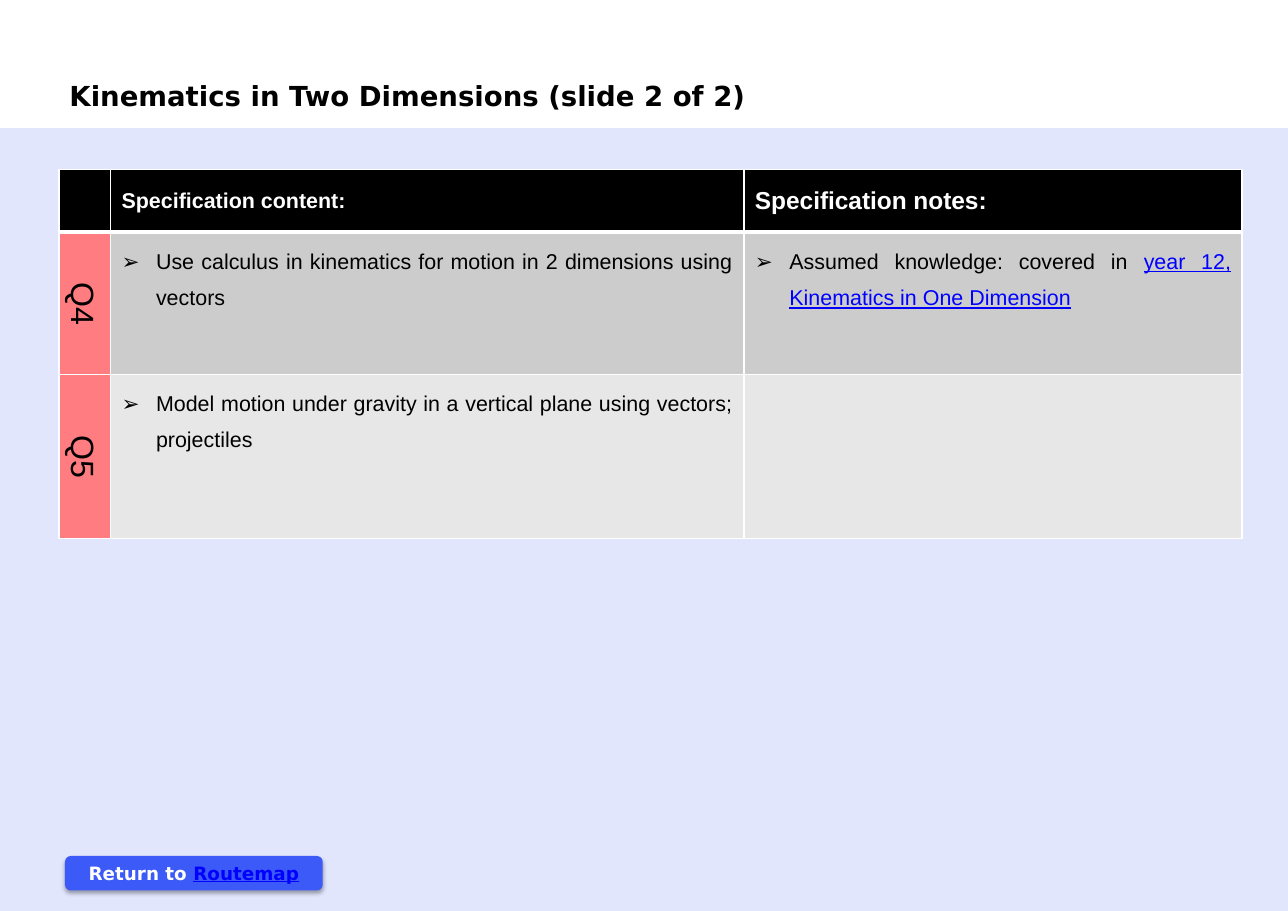
import pptx
import pptx.dml.color
import pptx.enum.shapes
import pptx.enum.text
import pptx.oxml
import pptx.oxml.ns
import pptx.util
from lxml import etree

Pt = pptx.util.Pt
RGBColor = pptx.dml.color.RGBColor
ALIGN = pptx.enum.text.PP_ALIGN
ANCHOR = pptx.enum.text.MSO_ANCHOR
SHAPES = pptx.enum.shapes.MSO_SHAPE
qn = pptx.oxml.ns.qn

BLUE = RGBColor(0x3B, 0x5A, 0xF7)
LINK = RGBColor(0x00, 0x00, 0xFF)
BLACK = RGBColor(0x00, 0x00, 0x00)
WHITE = RGBColor(0xFF, 0xFF, 0xFF)
PINK = RGBColor(0xFF, 0x7C, 0x80)
GREY = RGBColor(0xCC, 0xCC, 0xCC)
PALE_GREY = RGBColor(0xE7, 0xE7, 0xE7)

HEADING_FONT = "DejaVu Sans"
TABLE_FONT = "Arial"
WIDTH, HEIGHT = Pt(841.9), Pt(595.3)

# Each row: label, content, notes, linked notes, fill
TOPICS = [
    ("Q4", "Use calculus in kinematics for motion in 2 dimensions using vectors",
     "Assumed knowledge: covered in ", "year 12, Kinematics in One Dimension", GREY),
    ("Q5", "Model motion under gravity in a vertical plane using vectors; projectiles",
     "", "", PALE_GREY),
]


def write(paragraph, text, font, size, color, bold=False, link=""):
    paragraph.add_run().text = text
    paragraph.font.name = font
    paragraph.font.size = Pt(size)
    paragraph.font.bold = bold
    paragraph.font.color.rgb = color
    if link:
        linked = paragraph.add_run()
        linked.text = link
        linked.font.underline = True
        linked.font.color.rgb = LINK


def add_bullet(paragraph):
    paragraph.alignment = ALIGN.JUSTIFY
    paragraph.line_spacing = 1.5
    properties = paragraph._p.get_or_add_pPr()
    properties.set("marL", str(Pt(22.5)))
    properties.set("indent", str(Pt(-22.5)))
    etree.SubElement(properties, qn("a:buFont"), typeface=TABLE_FONT)
    etree.SubElement(properties, qn("a:buChar"), char="➢")


def format_cell(cell, color, bottom=1):
    cell.fill.solid()
    cell.fill.fore_color.rgb = color
    properties = cell._tc.get_or_add_tcPr()
    widths = {"lnL": 1, "lnR": 1, "lnT": 1, "lnB": bottom}
    for position, (side, width) in enumerate(widths.items()):
        border = etree.Element(qn(f"a:{side}"), w=str(Pt(width)))
        fill = etree.SubElement(border, qn("a:solidFill"))
        etree.SubElement(fill, qn("a:srgbClr"), val=str(WHITE))
        properties.insert(position, border)


def add_block(slide, kind, left, top, width, height):
    block = slide.shapes.add_shape(kind, left, top, width, height)
    block.shadow.inherit = False
    block.fill.solid()
    block.fill.fore_color.rgb = BLUE
    block.line.fill.background()
    return block


def add_band(slide):
    top = Pt(83.7)
    band = add_block(slide, SHAPES.RECTANGLE, 0, top, WIDTH, HEIGHT - top)
    color = band._element.spPr.find(qn("a:solidFill")).find(qn("a:srgbClr"))
    etree.SubElement(color, qn("a:alpha"), val="15000")


def add_return_button(slide):
    button = add_block(slide, SHAPES.ROUNDED_RECTANGLE,
                       Pt(42.5), Pt(559.4), Pt(168.5), Pt(22.5))
    effects = button._element.spPr.find(qn("a:effectLst"))
    shadow = etree.SubElement(effects, qn("a:outerShdw"), blurRad=str(Pt(3.1)),
                              dist=str(Pt(1.8)), dir="5400000", rotWithShape="0")
    color = etree.SubElement(shadow, qn("a:srgbClr"), val=str(BLACK))
    etree.SubElement(color, qn("a:alpha"), val="35000")
    button.text_frame.vertical_anchor = ANCHOR.MIDDLE
    caption = button.text_frame.paragraphs[0]
    caption.alignment = ALIGN.CENTER
    write(caption, "Return to ", HEADING_FONT, 12, WHITE, True, "Routemap")


def add_title(slide, text):
    title = slide.shapes.title
    title.left, title.top, title.width, title.height = Pt(38.2), Pt(48.2), Pt(495), Pt(29)
    frame = title.text_frame
    frame.word_wrap = True
    frame.auto_size = pptx.enum.text.MSO_AUTO_SIZE.SHAPE_TO_FIT_TEXT
    frame.vertical_anchor = ANCHOR.TOP
    heading = frame.paragraphs[0]
    heading.alignment = ALIGN.LEFT
    write(heading, text, HEADING_FONT, 18, BLACK, True)


def add_specification(slide):
    columns, rows = (33.8, 414, 325.6), (41, 92.9, 107.3)
    table = slide.shapes.add_table(len(rows), len(columns), Pt(38.5), Pt(110.9),
                                   Pt(sum(columns)), Pt(sum(rows))).table
    table.horz_banding = False
    for column, width in zip(table.columns, columns):
        column.width = Pt(width)
    for row, height in zip(table.rows, rows):
        row.height = Pt(height)

    # Header row
    headers = [("", 14), ("Specification content:", 14), ("Specification notes:", 16)]
    for cell, (text, size) in zip(table.rows[0].cells, headers):
        format_cell(cell, BLACK, bottom=3)
        cell.vertical_anchor = ANCHOR.MIDDLE
        if text:
            write(cell.text_frame.paragraphs[0], text, TABLE_FONT, size, WHITE, True)

    # Topic rows
    for row, (label, content, notes, link, color) in enumerate(TOPICS, 1):
        label_cell = table.cell(row, 0)
        format_cell(label_cell, PINK)
        label_cell._tc.get_or_add_tcPr().set("vert", "vert")
        label_line = label_cell.text_frame.paragraphs[0]
        label_line.alignment = ALIGN.CENTER
        write(label_line, label, TABLE_FONT, 21, BLACK)
        for column, (text, linked) in enumerate([(content, ""), (notes, link)], 1):
            cell = table.cell(row, column)
            format_cell(cell, color)
            if text:
                item = cell.text_frame.paragraphs[0]
                add_bullet(item)
                write(item, text, TABLE_FONT, 14, BLACK, link=linked)


def main():
    deck = pptx.Presentation()
    deck.slide_width, deck.slide_height = WIDTH, HEIGHT
    slide = deck.slides.add_slide(deck.slide_layouts[5])
    add_band(slide)
    add_return_button(slide)
    add_specification(slide)
    add_title(slide, "Kinematics in Two Dimensions (slide 2 of 2)")
    deck.save("out.pptx")


if __name__ == "__main__":
    main()
